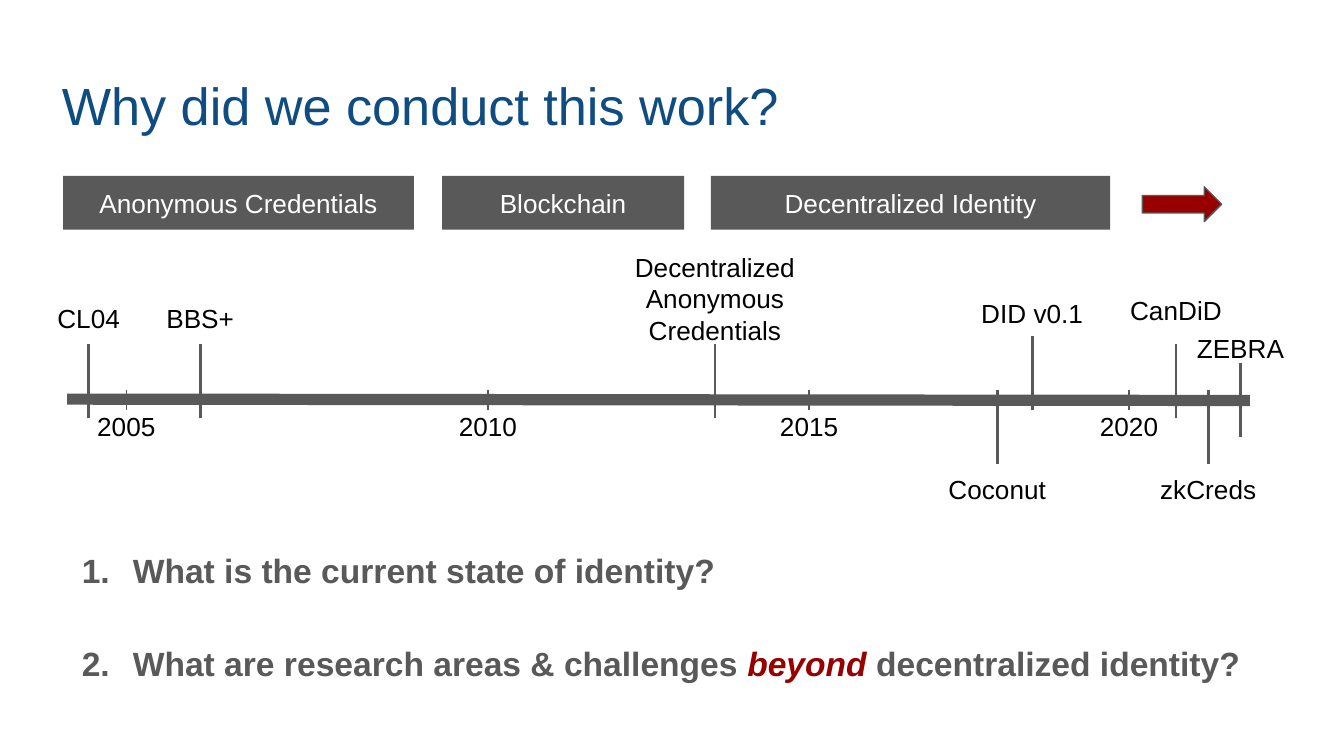
from lxml import etree
from pptx import Presentation
from pptx import util as u
from pptx.dml.color import RGBColor
from pptx.enum import shapes, text
from pptx.oxml.ns import qn

WHITE = RGBColor(0xFF, 0xFF, 0xFF)
BLACK = RGBColor(0, 0, 0)
GRAY = RGBColor(0x59, 0x59, 0x59)
BLUE = RGBColor(0x0F, 0x4C, 0x81)
RED = RGBColor(0x98, 0, 0)

CENTER = text.PP_ALIGN.CENTER
MIDDLE = text.MSO_ANCHOR.MIDDLE
TOP = text.MSO_ANCHOR.TOP

AXIS_Y = 2.97
MARK_LENGTH = 0.55
YEARS = [("2005", 0.94), ("2010", 3.63), ("2015", 6.02), ("2020", 8.4)]
ERAS = [
    ("Anonymous Credentials", 0.47, 2.61),
    ("Blockchain", 3.29, 1.8),
    ("Decentralized Identity", 5.29, 2.97),
]
MILESTONES = [
    ("CL04", 0.66, 2.56, 2.17, 0.74),
    ("BBS+", 1.49, 2.56, 2.17, 0.74),
    ("Decentralized Anonymous Credentials", 5.32, 2.56, 2.02, 2.13),
    ("Coconut", 7.42, 2.9, 3.44, 1.49),
    ("DID v0.1", 7.68, 2.5, 2.13, 1.49),
    ("CanDiD", 8.75, 2.56, 2.11, 0.98),
    ("zkCreds", 8.99, 2.9, 3.44, 0.98),
    ("ZEBRA", 9.23, 2.7, 2.39, 0.98),
]
QUESTIONS = [
    [("What is the current state of identity?", {})],
    [
        ("What are research areas & challenges ", {}),
        ("beyond", {"italic": True, "color": RED}),
        (" decentralized identity?", {}),
    ],
]


def set_frame(sp, anchor, inset_x=0.1, inset_y=0.1):
    tf = sp.text_frame
    settings = {
        "word_wrap": True,
        "vertical_anchor": anchor,
        "margin_left": u.Inches(inset_x),
        "margin_right": u.Inches(inset_x),
        "margin_top": u.Inches(inset_y),
        "margin_bottom": u.Inches(inset_y),
    }
    for name, value in settings.items():
        setattr(tf, name, value)
    return tf


def add_run(p, content, size, color, **fmt):
    r = p.add_run()
    r.text = content
    r.font.color.rgb = color
    for name, value in {"name": "Arial", "size": u.Pt(size), **fmt}.items():
        setattr(r.font, name, value)


def add_box(s, x, y, w, h):
    return s.shapes.add_textbox(*map(u.Inches, (x, y, w, h)))


def add_shape(s, kind, x, y, w, h, fill):
    sp = s.shapes.add_shape(kind, *map(u.Inches, (x, y, w, h)))
    sp.shadow.inherit = False
    sp.fill.solid()
    sp.fill.fore_color.rgb = fill
    sp.line.fill.background()
    return sp


def add_line(s, x1, y1, x2, y2, width):
    ln = s.shapes.add_connector(
        shapes.MSO_CONNECTOR.STRAIGHT, *map(u.Inches, (x1, y1, x2, y2))
    )
    ln.line.color.rgb = GRAY
    ln.line.width = u.Pt(width)
    etree.SubElement(ln._element.spPr, qn("a:effectLst"))


def add_label(sp, content, color=BLACK):
    p = set_frame(sp, MIDDLE).paragraphs[0]
    p.alignment = CENTER
    add_run(p, content, 14, color)


def add_title(s, content):
    tf = set_frame(add_box(s, 0.39, 0.49, 9.21, 0.63), MIDDLE, 0.07, 0.04)
    p = tf.paragraphs[0]
    p.line_spacing = 0.9
    add_run(p, content, 28, BLUE)


def add_eras(s):
    for name, x, w in ERAS:
        sp = add_shape(s, shapes.MSO_SHAPE.RECTANGLE, x, 1.31, w, 0.4, GRAY)
        add_label(sp, name, WHITE)
    arrow = add_shape(s, shapes.MSO_SHAPE.RIGHT_ARROW, 8.5, 1.39, 0.59, 0.26, RED)
    arrow.line.color.rgb = GRAY
    arrow.line.width = u.Pt(0.75)


def add_timeline(s):
    add_line(s, 0.5, AXIS_Y, 9.3, AXIS_Y + 0.01, 6)
    for year, x in YEARS:
        add_line(s, x, 2.9, x, 3.05, 0.75)
        add_label(add_box(s, x - 0.69 / 2, 3.01, 0.69, 0.32), year)
    for name, x, mark_y, label_y, w in MILESTONES:
        add_line(s, x, mark_y, x, mark_y + MARK_LENGTH, 1.5)
        add_label(add_box(s, x - w / 2, label_y, w, 0.4), name)


def number_paragraph(p):
    pPr = p._p.get_or_add_pPr()
    pPr.set("marL", str(u.Inches(0.5)))
    pPr.set("indent", str(u.Inches(-0.38)))
    clr = etree.SubElement(pPr, qn("a:buClr"))
    etree.SubElement(clr, qn("a:srgbClr"), val=str(GRAY))
    etree.SubElement(pPr, qn("a:buFont"), typeface="Arial")
    etree.SubElement(pPr, qn("a:buAutoNum"), type="arabicPeriod")


def add_questions(s):
    tf = set_frame(add_box(s, 0.39, 3.95, 9.21, 1.27), TOP)
    for i, runs in enumerate(QUESTIONS):
        p = tf.add_paragraph() if i else tf.paragraphs[0]
        p.line_spacing = 1.15
        p.space_before = u.Pt(25 if i else 0)
        number_paragraph(p)
        for content, fmt in runs:
            add_run(p, content, **{"size": 18, "color": GRAY, "bold": True, **fmt})


def main():
    prs = Presentation()
    prs.slide_width = u.Inches(10)
    prs.slide_height = prs.slide_width * 9 // 16
    s = prs.slides.add_slide(prs.slide_layouts[6])
    add_title(s, "Why did we conduct this work?")
    add_eras(s)
    add_timeline(s)
    add_questions(s)
    prs.save("out.pptx")


if __name__ == "__main__":
    main()
